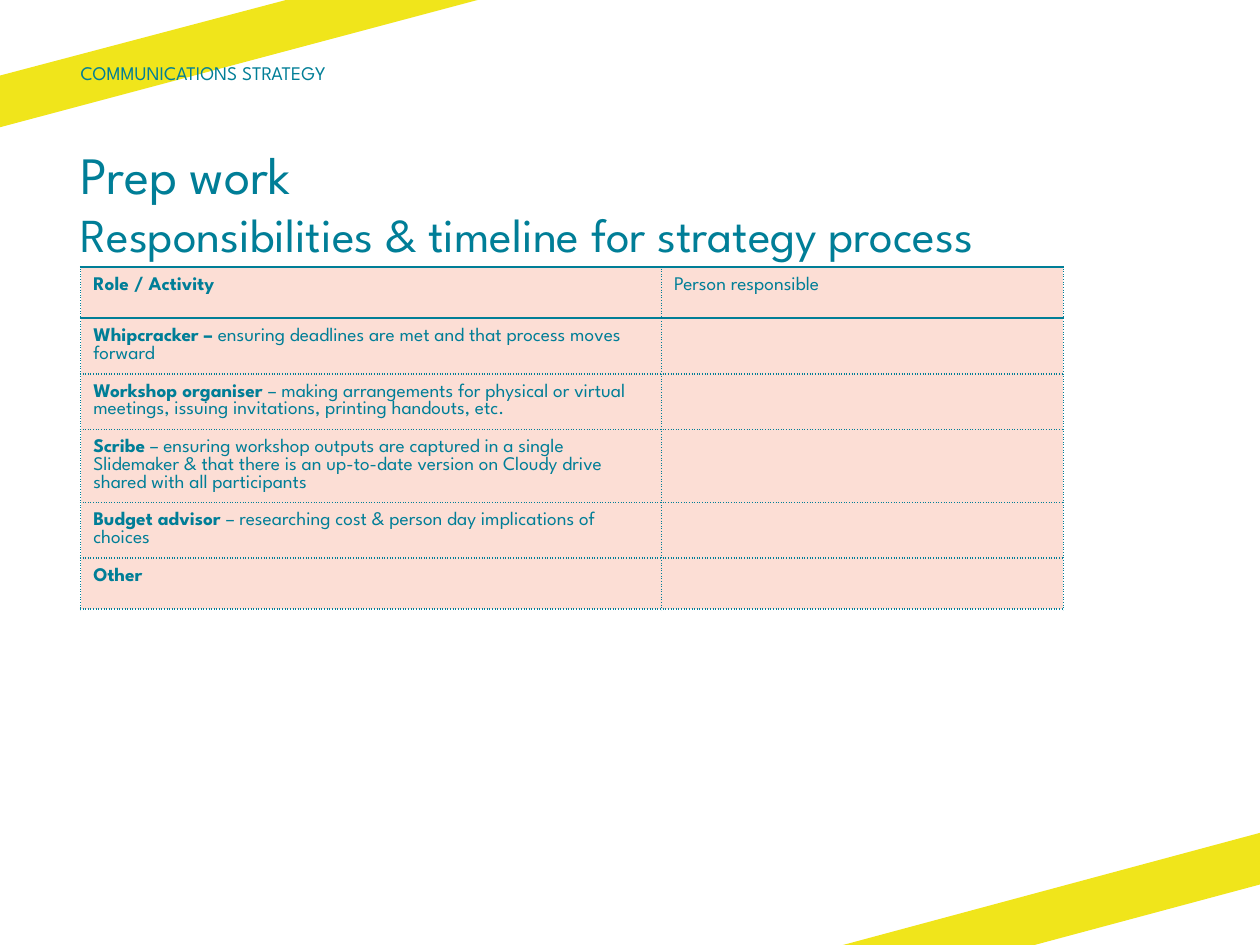
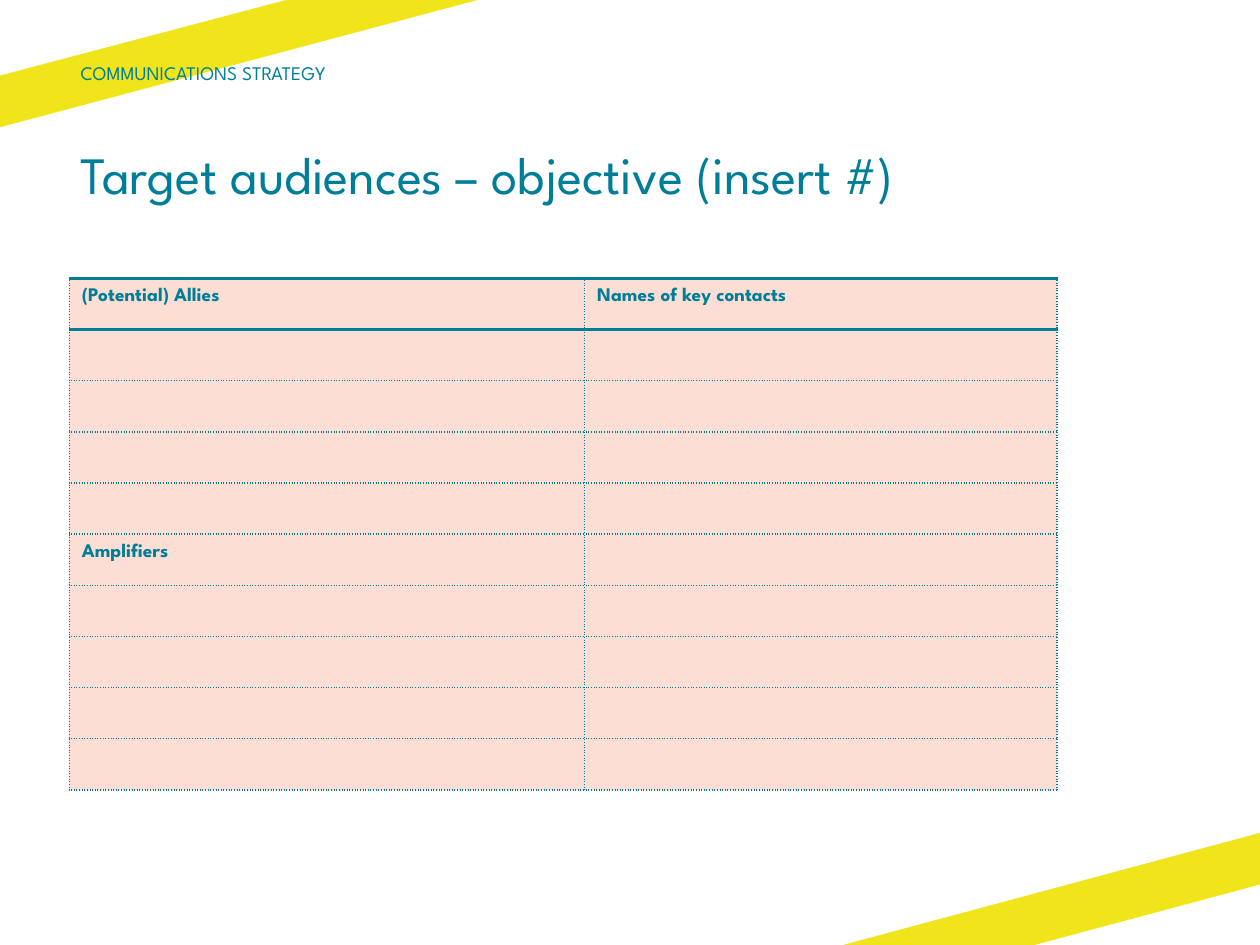
from lxml.etree import SubElement
from pptx import Presentation
from pptx.dml.color import RGBColor
from pptx.enum.text import MSO_ANCHOR, MSO_AUTO_SIZE, PP_ALIGN
from pptx.oxml.ns import qn
from pptx.util import Inches, Pt

TEAL = RGBColor(0x00, 0x7E, 0x97)
YELLOW = RGBColor(0xF0, 0xE5, 0x1B)
PINK = RGBColor(0xFC, 0xDE, 0xD5)
FONT = "League Spartan"
TEXT_SIZE = 11
ROW_HEIGHT = 4.06 / 10

# Boxes are left, top, width, height in inches
TITLE_BOX = (0.64, 1.13, 8.73, 1.02)
CAPTION_BOX = (0.64, 0.43, 4.57, 0.29)
BANDS = [
    [(2.27, 0), (0, 0.6), (0, 1.01), (3.79, 0)],
    [(6.69, 7.5), (8.21, 7.5), (10, 7.02), (10, 6.61)],
]

# Each cell is a list of (text, bold) runs
ROLE_ROWS = [
    [[("Role / Activity", True)], [("Person responsible", False)]],
    [[("Whipcracker – ", True),
      ("ensuring deadlines are met and that process moves forward", False)], []],
    [[("Workshop organiser ", True),
      ("– making arrangements for physical or virtual meetings, issuing "
       "invitations, printing handouts, etc.", False)], []],
    [[("Scribe", True),
      (" – ensuring workshop outputs are captured in a single Slidemaker & that "
       "there is an up-to-date version on Cloudy drive shared with all "
       "participants", False)], []],
    [[("Budget advisor ", True),
      ("– researching cost & person day implications of choices", False)], []],
    [[("Other", True)], []],
]
EMPTY_ROWS = [[[], []]] * 4
AUDIENCE_ROWS = [
    [[("(Potential) Allies", True)], [("Names of key contacts", True)]],
    *EMPTY_ROWS,
    [[("Amplifiers", True)], []],
    *EMPTY_ROWS,
]


def add_run(paragraph, text, size, bold=False):
    run = paragraph.add_run()
    run.text = text
    run.font.name = FONT
    run.font.size = Pt(size)
    run.font.bold = bold
    run.font.color.rgb = TEAL


def clear_insets(frame):
    frame.margin_left = frame.margin_right = 0
    frame.margin_top = frame.margin_bottom = 0


def add_bands(slide):
    """Draw the diagonal bands and place them on the shared layout."""
    layout_tree = slide.slide_layout.shapes._spTree
    for corners in BANDS:
        start, *others = [(Inches(x), Inches(y)) for x, y in corners]
        builder = slide.shapes.build_freeform(*start)
        builder.add_line_segments(others, close=True)
        band = builder.convert_to_shape()
        band.shadow.inherit = False
        band.fill.solid()
        band.fill.fore_color.rgb = YELLOW
        band.line.fill.background()
        layout_tree.insert(2, band._element)


def add_title(slide, box, lines):
    title = slide.shapes.title
    title.left, title.top, title.width, title.height = map(Inches, box)
    frame = title.text_frame
    clear_insets(frame)
    frame.word_wrap = True
    frame.auto_size = MSO_AUTO_SIZE.NONE
    frame.vertical_anchor = MSO_ANCHOR.TOP
    paragraph = frame.paragraphs[0]
    paragraph.alignment = PP_ALIGN.LEFT
    for index, (text, size) in enumerate(lines):
        if index:
            paragraph.add_line_break()
            line_break = paragraph._p.findall(qn("a:br"))[-1]
            mark = SubElement(line_break, qn("a:rPr"), sz=str(size * 100))
            SubElement(mark, qn("a:latin"), typeface=FONT)
        add_run(paragraph, text, size)


def add_caption(slide, box):
    frame = slide.shapes.add_textbox(*map(Inches, box)).text_frame
    clear_insets(frame)
    frame.word_wrap = True
    frame.vertical_anchor = MSO_ANCHOR.MIDDLE
    add_run(frame.paragraphs[0], "COMMUNICATIONS STRATEGY", TEXT_SIZE)


def add_border(cell, side, solid):
    line = SubElement(cell._tc.get_or_add_tcPr(), qn(f"a:ln{side}"),
                      w=str(Pt(1.5 if solid else 1)))
    fill = SubElement(line, qn("a:solidFill"))
    SubElement(fill, qn("a:srgbClr"), val=str(TEAL))
    SubElement(line, qn("a:prstDash"), val="solid" if solid else "sysDot")


def fill_cell(cell, runs, row_index):
    cell.margin_left = cell.margin_right = Inches(0.1)
    cell.margin_top = cell.margin_bottom = Inches(0.08)
    # Solid rules enclose the header row, dotted rules the rest
    add_border(cell, "L", False)
    add_border(cell, "R", False)
    add_border(cell, "T", row_index <= 1)
    add_border(cell, "B", row_index == 0)
    cell.fill.solid()
    cell.fill.fore_color.rgb = PINK
    paragraph = cell.text_frame.paragraphs[0]
    for text, bold in runs:
        add_run(paragraph, text, TEXT_SIZE, bold)
    if not runs:
        # Keeps an empty cell from growing its row
        mark = SubElement(paragraph._p, qn("a:endParaRPr"), sz=str(TEXT_SIZE * 100))
        SubElement(mark, qn("a:latin"), typeface=FONT)


def add_grid(slide, left, top, column_widths, rows):
    table = slide.shapes.add_table(
        len(rows), len(column_widths), Inches(left), Inches(top),
        Inches(sum(column_widths)), Inches(ROW_HEIGHT * len(rows))).table
    table.first_row = table.horz_banding = False
    for column, width in zip(table.columns, column_widths):
        column.width = Inches(width)
    for row_index, row in enumerate(rows):
        table.rows[row_index].height = Inches(ROW_HEIGHT)
        for column_index, runs in enumerate(row):
            fill_cell(table.cell(row_index, column_index), runs, row_index)


def add_table_slide(presentation, title_lines, left, top, column_widths, rows):
    slide = presentation.slides.add_slide(presentation.slide_layouts[5])
    add_title(slide, TITLE_BOX, title_lines)
    add_grid(slide, left, top, column_widths, rows)
    add_caption(slide, CAPTION_BOX)
    return slide


def main():
    presentation = Presentation()
    presentation.slide_width = Inches(10)
    presentation.slide_height = Inches(7.5)

    # Responsibilities
    slide = add_table_slide(
        presentation,
        [("Prep work", 30), ("Responsibilities & timeline for strategy process", 27)],
        0.64, 2.12, (4.61, 3.19), ROLE_ROWS)
    add_bands(slide)

    # Target audiences
    add_table_slide(
        presentation, [("Target audiences – objective (insert #)", 30)],
        0.55, 2.21, (4.09, 3.75), AUDIENCE_ROWS)

    presentation.save("out.pptx")


if __name__ == "__main__":
    main()
